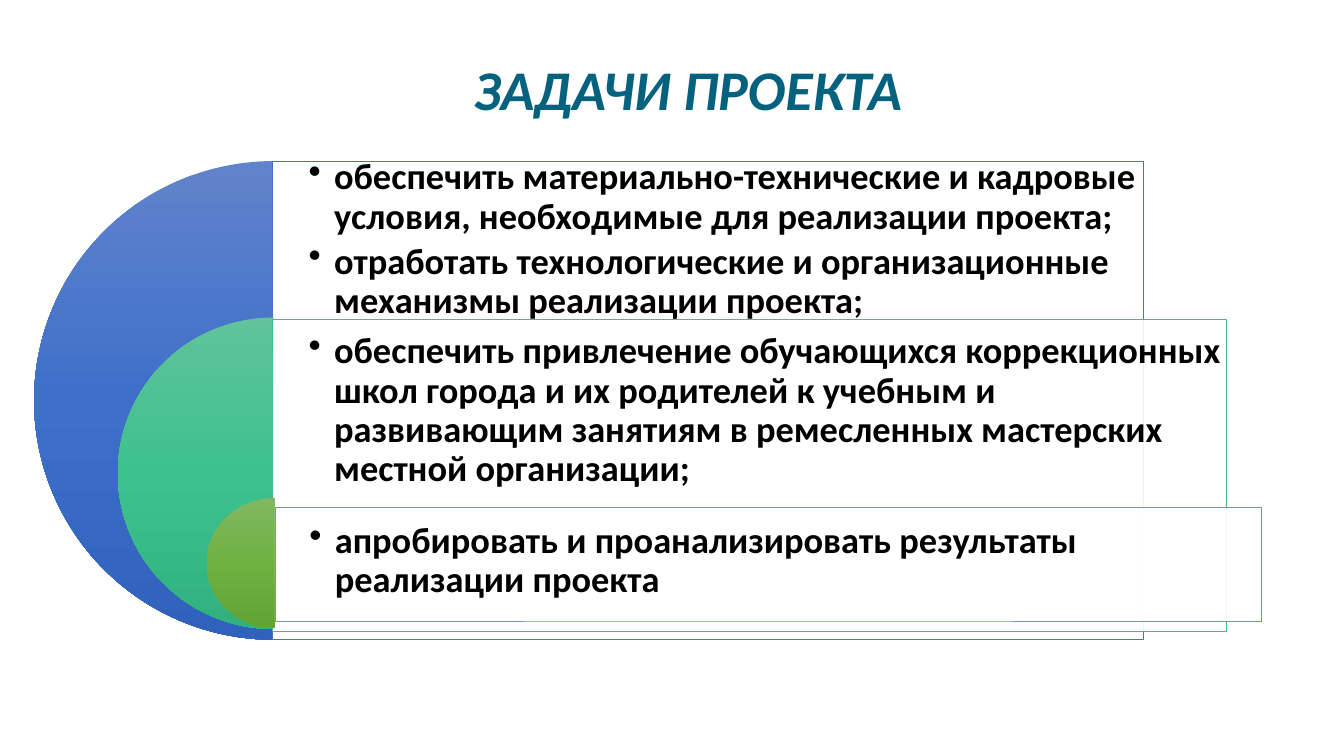
from copy import deepcopy
from dataclasses import dataclass

from pptx import Presentation
from pptx.dml.color import RGBColor
from pptx.enum.shapes import MSO_SHAPE
from pptx.enum.text import MSO_ANCHOR, PP_ALIGN
from pptx.oxml.ns import qn
from pptx.util import Cm, Pt


@dataclass(frozen=True)
class Theme:
    font: str = "Calibri"
    title_size: int = 40
    body_size: int = 26
    title: str = "05627F"
    text: str = "000000"
    panel: str = "FFFFFF"
    panel_alpha: int = 90000
    blue: tuple = ("6183CB", "3E70CA", "3062BB")
    teal: tuple = ("60C39A", "3DC18F", "31B080")
    green: tuple = ("81B861", "6FB242", "62A336")
    blue_line: str = "4472C4"
    teal_line: str = "43BB8D"
    green_line: str = "70AD47"


THEME = Theme()

LAYERS = [
    {
        "pie": (0.86, 4.06, 12.06, 12.06),
        "panel": (6.86, 4.06, 21.95, 12.06),
        "text": (7.09, 3.91, 24.79, 4.27),
        "colors": THEME.blue,
        "line": THEME.blue_line,
        "tasks": [
            "обеспечить материально-технические и кадровые условия, "
            "необходимые для реализации проекта;",
            "отработать технологические и организационные механизмы реализации проекта;",
        ],
    },
    {
        "pie": (2.97, 8.0, 7.85, 7.85),
        "panel": (6.86, 8.05, 24.05, 7.85),
        "text": (7.09, 8.08, 24.46, 4.55),
        "colors": THEME.teal,
        "line": THEME.teal_line,
        "tasks": [
            "обеспечить привлечение обучающихся коррекционных школ города "
            "и их родителей к учебным и развивающим занятиям в ремесленных "
            "мастерских местной организации;",
        ],
    },
    {
        "pie": (5.21, 12.55, 3.45, 3.28),
        "panel": (6.93, 12.78, 24.87, 2.87),
        "text": (7.11, 12.34, 23.52, 3.61),
        "colors": THEME.green,
        "line": THEME.green_line,
        "tasks": ["апробировать и проанализировать результаты реализации проекта"],
    },
]


def apply(obj, values):
    for name, value in values.items():
        setattr(obj, name, value)


class SlideBuilder:
    def __init__(self, prs, theme):
        self.theme = theme
        self.slide = prs.slides.add_slide(prs.slide_layouts[5])

    def format_run(self, r, size, color, italic=False):
        apply(r.font, {"name": self.theme.font, "size": Pt(size),
                       "bold": True, "italic": italic})
        r.font.color.rgb = RGBColor.from_string(color)

    def title(self, text, box):
        sp = self.slide.shapes.title
        apply(sp, dict(zip(("left", "top", "width", "height"), map(Cm, box))))
        tf = sp.text_frame
        apply(tf, {"word_wrap": True, "vertical_anchor": MSO_ANCHOR.MIDDLE})
        p = tf.paragraphs[0]
        p.alignment = PP_ALIGN.CENTER
        r = p.add_run()
        r.text = text
        self.format_run(r, self.theme.title_size, self.theme.title, italic=True)

    def shape(self, kind, box):
        sp = self.slide.shapes.add_shape(kind, *map(Cm, box))
        sp.shadow.inherit = False
        return sp

    def half_circle(self, box, colors):
        sp = self.shape(MSO_SHAPE.PIE, box)
        sp.adjustments[0], sp.adjustments[1] = 54, 162
        sp.line.fill.background()
        sp.fill.gradient()
        sp.fill.gradient_angle = 270
        gs = sp._element.spPr.find(".//" + qn("a:gs"))
        gs.addnext(deepcopy(gs))
        for stop, position, color in zip(sp.fill.gradient_stops, (0, 0.5, 1), colors):
            stop.position = position
            stop.color.rgb = RGBColor.from_string(color)

    def panel(self, box, line):
        sp = self.shape(MSO_SHAPE.RECTANGLE, box)
        sp.fill.solid()
        sp.fill.fore_color.rgb = RGBColor.from_string(self.theme.panel)
        color = sp._element.spPr.find(qn("a:solidFill"))[0]
        alpha = color.makeelement(qn("a:alpha"), {"val": str(self.theme.panel_alpha)})
        color.append(alpha)
        sp.line.color.rgb = RGBColor.from_string(line)
        sp.line.width = Pt(0.5)

    def bullets(self, box, items):
        tf = self.slide.shapes.add_textbox(*map(Cm, box)).text_frame
        sides = ("left", "top", "right", "bottom")
        apply(tf, {"word_wrap": True, "vertical_anchor": MSO_ANCHOR.MIDDLE})
        apply(tf, {f"margin_{side}": Cm(0.69) for side in sides})
        for i, item in enumerate(items):
            p = tf.add_paragraph() if i else tf.paragraphs[0]
            apply(p, {"line_spacing": 0.9, "space_after": Pt(4)})
            pPr = p._p.get_or_add_pPr()
            pPr.set("marL", str(Cm(0.64)))
            pPr.set("indent", str(-Cm(0.64)))
            pPr.append(pPr.makeelement(qn("a:buChar"), {"char": "•"}))
            r = p.add_run()
            r.text = item
            self.format_run(r, self.theme.body_size, self.theme.text)


def main():
    prs = Presentation()
    apply(prs, {"slide_width": Cm(33.87), "slide_height": Cm(19.05)})
    s = SlideBuilder(prs, THEME)
    s.title("ЗАДАЧИ ПРОЕКТА", (7.75, 1.24, 19.18, 1.96))
    for layer in LAYERS:
        s.half_circle(layer["pie"], layer["colors"])
        s.panel(layer["panel"], layer["line"])
    for layer in LAYERS:
        s.bullets(layer["text"], layer["tasks"])
    prs.save("out.pptx")


if __name__ == "__main__":
    main()
